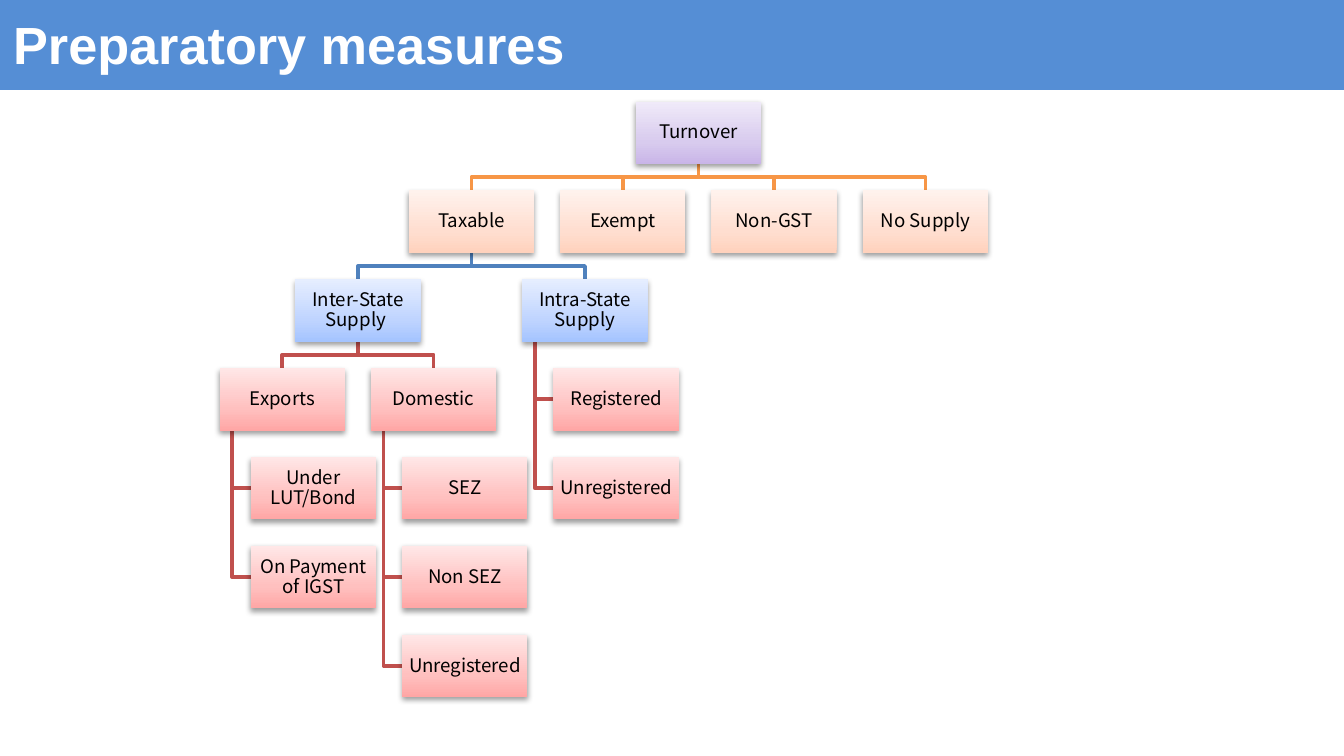
import dataclasses

import lxml.etree
import pptx
import pptx.dml.color
import pptx.enum.shapes
import pptx.enum.text
import pptx.oxml.ns
import pptx.util
from pptx.util import Cm

COLOURS = {
    "banner": "558ED5",
    "white": "FFFFFF",
    "black": "000000",
    "orange line": "F79646",
    "blue line": "4F81BD",
    "red line": "C0504D",
}
GRADIENTS = {
    "purple": ("C9B5E8", "D8CBEE", "F0EAF9"),
    "orange": ("FFD2BD", "FFDED0", "FFF2ED"),
    "blue": ("A4C4FF", "BFD4FF", "E6EEFF"),
    "red": ("FFA6A5", "FFC0BF", "FFE7E7"),
}
GRADIENT_POSITIONS = (0, 35, 100)
TREE_LEFT, TREE_TOP = 4.15, 1.92
COLUMN_PITCH, ROW_PITCH = 2.86, 1.68
BOX_WIDTH, BOX_HEIGHT = 2.37, 1.18
HANGING_INDENT = 0.59
STEM_INSET = 0.24


@dataclasses.dataclass
class Node:
    label: str
    style: str
    column: float
    row: int
    children: tuple = ()
    hanging: bool = False

    @property
    def left(self):
        indent = HANGING_INDENT if self.hanging else 0
        return TREE_LEFT + self.column * COLUMN_PITCH + indent

    @property
    def top(self):
        return TREE_TOP + self.row * ROW_PITCH


def branch(label, style, row, *children):
    column = (children[0].column + children[-1].column) / 2
    return Node(label, style, column, row, children)


def hanging_branch(label, style, column, row, *names):
    children = tuple(
        Node(name, "red", column, row + step, hanging=True)
        for step, name in enumerate(names, 1)
    )
    return Node(label, style, column, row, children)


def turnover_tree():
    exports = hanging_branch("Exports", "red", 0, 3, "Under LUT/Bond", "On Payment of IGST")
    domestic = hanging_branch("Domestic", "red", 1, 3, "SEZ", "Non SEZ", "Unregistered")
    inter_state = branch("Inter-State Supply ", "blue", 2, exports, domestic)
    intra_state = hanging_branch("Intra-State Supply", "blue", 2, 2, "Registered", "Unregistered")
    taxable = branch("Taxable", "orange", 1, inter_state, intra_state)
    others = [
        Node(name, "orange", taxable.column + step, 1)
        for step, name in enumerate(("Exempt", "Non-GST", "No Supply"), 1)
    ]
    return branch("Turnover", "purple", 0, taxable, *others)


def walk(node):
    yield node
    for child in node.children:
        yield from walk(child)


def colour(name):
    return pptx.dml.color.RGBColor.from_string(COLOURS[name])


def write_text(box, text, font, size, colour_name, bold=False):
    frame = box.text_frame
    frame.text = text
    frame.word_wrap = True
    frame.vertical_anchor = pptx.enum.text.MSO_ANCHOR.MIDDLE
    span = frame.paragraphs[0].runs[0]
    span.font.name = font
    span.font.size = pptx.util.Pt(size)
    span.font.bold = bold
    span.font.color.rgb = colour(colour_name)
    return frame


def add_rectangle(page, left, top, width, height):
    box = page.shapes.add_shape(
        pptx.enum.shapes.MSO_SHAPE.RECTANGLE, Cm(left), Cm(top), Cm(width), Cm(height)
    )
    box.shadow.inherit = False
    box.line.fill.background()
    return box


def add_banner(page, text):
    box = add_rectangle(page, 0, -0.05, 25.4, 1.75)
    box.fill.solid()
    box.fill.fore_color.rgb = colour("banner")
    frame = write_text(box, text, "Arial", 28, "white", bold=True)
    frame.paragraphs[0].alignment = pptx.enum.text.PP_ALIGN.LEFT


def add_xml(parent, tag, **attributes):
    return lxml.etree.SubElement(parent, pptx.oxml.ns.qn(tag), attributes)


def fill_gradient(box, stops):
    box.fill.gradient()
    box.fill.gradient_angle = 90
    stop_list = box.element.spPr.find(".//" + pptx.oxml.ns.qn("a:gsLst"))
    for old_stop in list(stop_list):
        stop_list.remove(old_stop)
    for position, value in zip(GRADIENT_POSITIONS, stops):
        stop = add_xml(stop_list, "a:gs", pos=str(position * 1000))
        add_xml(stop, "a:srgbClr", val=value)


def add_shadow(box):
    effects = box.element.spPr.find(pptx.oxml.ns.qn("a:effectLst"))
    shadow = add_xml(
        effects, "a:outerShdw", blurRad="40000", dist="20000", dir="5400000", rotWithShape="0"
    )
    shade = add_xml(shadow, "a:srgbClr", val=COLOURS["black"])
    add_xml(shade, "a:alpha", val="38000")


def add_node(page, node):
    box = add_rectangle(page, node.left, node.top, BOX_WIDTH, BOX_HEIGHT)
    fill_gradient(box, GRADIENTS[node.style])
    add_shadow(box)
    frame = write_text(box, node.label, "Noto Sans CJK KR", 10, "black")
    frame.margin_left = frame.margin_right = Cm(0.02)
    frame.margin_top = frame.margin_bottom = Cm(0.02)
    para = frame.paragraphs[0]
    para.alignment = pptx.enum.text.PP_ALIGN.CENTER
    para.line_spacing = 0.9


def link_points(parent, child):
    bottom = parent.top + BOX_HEIGHT
    if child.hanging:
        stem = parent.left + STEM_INSET
        middle = child.top + BOX_HEIGHT / 2
        return [(stem, bottom), (stem, middle), (child.left, middle)]
    start = parent.left + BOX_WIDTH / 2
    end = child.left + BOX_WIDTH / 2
    bus = (bottom + child.top) / 2
    return [(start, bottom), (start, bus), (end, bus), (end, child.top)]


def add_link(page, parent, child):
    points = [(Cm(x), Cm(y)) for x, y in link_points(parent, child)]
    builder = page.shapes.build_freeform(*points[0])
    builder.add_line_segments(points[1:], close=False)
    link = builder.convert_to_shape()
    link.shadow.inherit = False
    link.fill.background()
    link.line.width = pptx.util.Pt(2)
    link.line.color.rgb = colour(child.style + " line")


def main():
    deck = pptx.Presentation()
    deck.slide_width, deck.slide_height = Cm(25.4), Cm(14.29)
    page = deck.slides.add_slide(deck.slide_layouts[6])
    add_banner(page, "Preparatory measures")
    nodes = list(walk(turnover_tree()))
    for node in nodes:
        for child in reversed(node.children):
            add_link(page, node, child)
    for node in nodes:
        add_node(page, node)
    deck.save("out.pptx")


if __name__ == "__main__":
    main()
